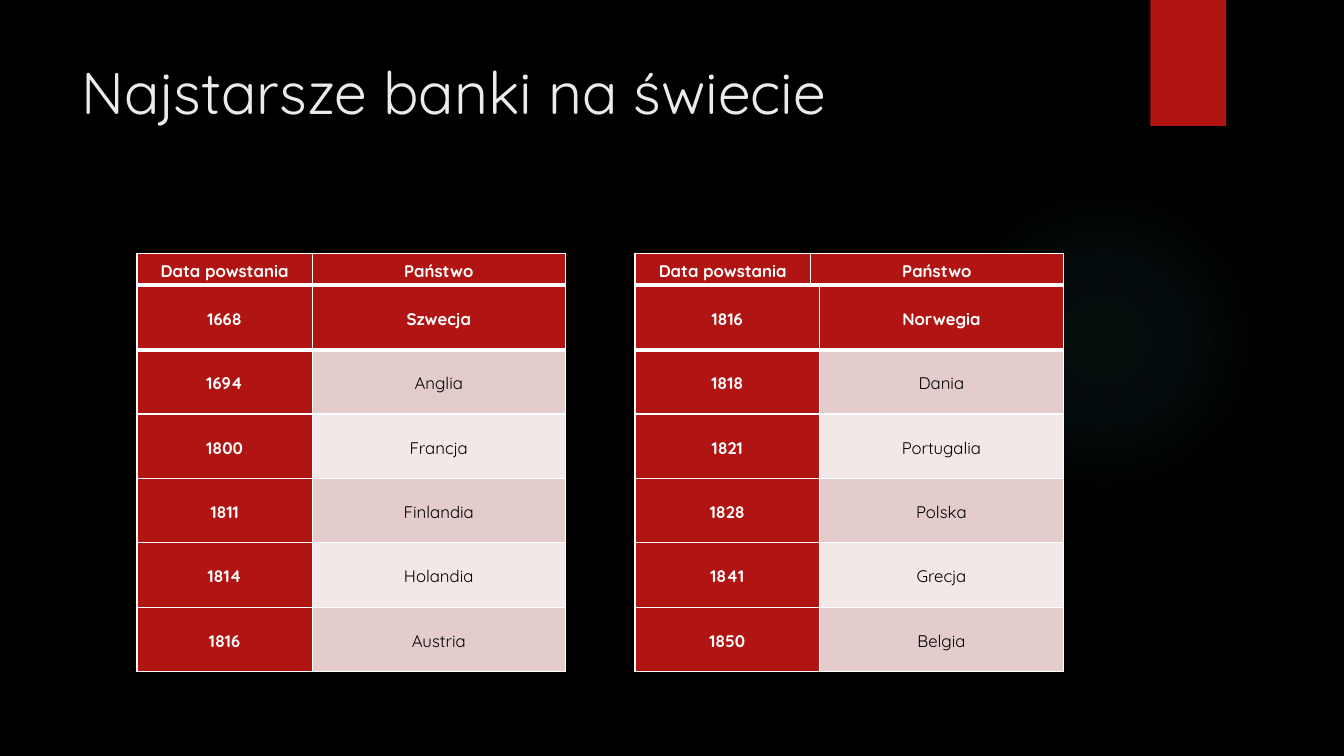
from dataclasses import dataclass
from lxml import etree
from pptx import Presentation
from pptx.dml.color import RGBColor as Rgb
from pptx.enum import shapes, text
from pptx.oxml import parse_xml
from pptx.oxml.ns import nsdecls, qn
from pptx.util import Pt


@dataclass(frozen=True)
class Theme:
    font: str = "Quicksand"
    back: str = "000000"
    red: str = "B01513"
    glow: str = "50B9C1"
    title: str = "EBEBEB"
    white: str = "FFFFFF"
    black: str = "000000"
    bands: tuple = ("F2E8E7", "E4CCCC")
    large: int = 42
    small: int = 12
    thin: int = 1
    thick: int = 3


THEME = Theme()
HEAD = [("Data powstania", "Państwo")]
OLDER = [("1668", "Szwecja"), ("1694", "Anglia"), ("1800", "Francja"),
         ("1811", "Finlandia"), ("1814", "Holandia"), ("1816", "Austria")]
NEWER = [("1816", "Norwegia"), ("1818", "Dania"), ("1821", "Portugalia"),
         ("1828", "Polska"), ("1841", "Grecja"), ("1850", "Belgia")]


def add_run(para, words, size, color, bold=False):
    run = para.add_run()
    run.text = words
    font = run.font
    font.name, font.size, font.bold = THEME.font, Pt(size), bold
    font.color.rgb = Rgb.from_string(color)


def add_plain(slide, kind, box):
    shape = slide.shapes.add_shape(kind, *map(Pt, box))
    shape.shadow.inherit = False
    shape.line.fill.background()
    return shape


def draw_glow(slide, box):
    shape = add_plain(slide, shapes.MSO_SHAPE.OVAL, box)
    stops = "".join(
        f'<a:gs pos="{pos * 1000}"><a:srgbClr val="{THEME.glow}">'
        f'<a:alpha val="{alpha * 1000}"/></a:srgbClr></a:gs>'
        for pos, alpha in ((0, 7), (36, 6), (69, 0)))
    grad = parse_xml(
        f'<a:gradFill {nsdecls("a")}><a:gsLst>{stops}</a:gsLst><a:path path="circle">'
        '<a:fillToRect l="50000" t="50000" r="50000" b="50000"/></a:path></a:gradFill>')
    shape._element.spPr.find(qn("a:prstGeom")).addnext(grad)


def draw_tab(slide, box):
    shape = add_plain(slide, shapes.MSO_SHAPE.RECTANGLE, box)
    shape.fill.solid()
    shape.fill.fore_color.rgb = Rgb.from_string(THEME.red)


def draw_title(slide, box, words):
    title = slide.shapes.title
    title.left, title.top, title.width, title.height = map(Pt, box)
    frame = title.text_frame
    frame.auto_size = text.MSO_AUTO_SIZE.NONE
    frame.vertical_anchor = text.MSO_ANCHOR.TOP
    para = frame.paragraphs[0]
    para.alignment = text.PP_ALIGN.LEFT
    add_run(para, words, THEME.large, THEME.title)


def add_edges(cell, top, base):
    props = cell._tc.get_or_add_tcPr()
    for side, width in zip("LRTB", (THEME.thin, THEME.thin, top, base)):
        edge = etree.SubElement(props, qn(f"a:ln{side}"), w=str(Pt(width)))
        fill = etree.SubElement(edge, qn("a:solidFill"))
        etree.SubElement(fill, qn("a:srgbClr"), val=THEME.white)


def fill_cell(cell, words, row, col):
    plain = row > 0 and col > 0
    add_edges(cell, THEME.thick if row == 1 else THEME.thin,
              THEME.thick if row == 0 else THEME.thin)
    cell.fill.solid()
    cell.fill.fore_color.rgb = Rgb.from_string(THEME.bands[row % 2] if plain else THEME.red)
    cell.margin_left = cell.margin_right = Pt(5)
    cell.margin_top = cell.margin_bottom = Pt(0)
    cell.vertical_anchor = text.MSO_ANCHOR.MIDDLE
    para = cell.text_frame.paragraphs[0]
    para.alignment = text.PP_ALIGN.CENTER
    para.line_spacing = 1.15
    add_run(para, words, THEME.small, THEME.black if plain else THEME.white, not plain)


def draw_table(slide, box, first, rows):
    left, top, width, height = box
    table = slide.shapes.add_table(len(rows), 2, *map(Pt, box)).table
    for column, size in zip(table.columns, (first, width - first)):
        column.width = Pt(size)
    for row, pair in enumerate(rows):
        table.rows[row].height = Pt(height / len(rows))
        for col, words in enumerate(pair):
            fill_cell(table.cell(row, col), words, row, col)


def draw_banks(slide, box):
    left, top, width, height = box
    head, wide, date = 23, 306, 125.3
    lefts = (left, left + width - wide)
    for place, first, rows in zip(lefts, (date, 131.8), (OLDER, NEWER)):
        draw_table(slide, (place, top + head, wide, height - head), first, rows)
    for place in lefts:
        draw_table(slide, (place, top, wide, head), date, HEAD)


def main():
    deck = Presentation()
    deck.slide_width, deck.slide_height = Pt(960), Pt(540)
    slide = deck.slides.add_slide(deck.slide_layouts[5])
    slide.background.fill.solid()
    slide.background.fill.fore_color.rgb = Rgb.from_string(THEME.back)
    draw_glow(slide, (677.5, 131.8, 221.8, 221.8))
    draw_tab(slide, (821.8, 0, 54, 90))
    draw_title(slide, (51, 36, 741, 110), "Najstarsze banki na świecie")
    draw_banks(slide, (97.8, 180.8, 661.8, 299))
    deck.save("out.pptx")


if __name__ == "__main__":
    main()
